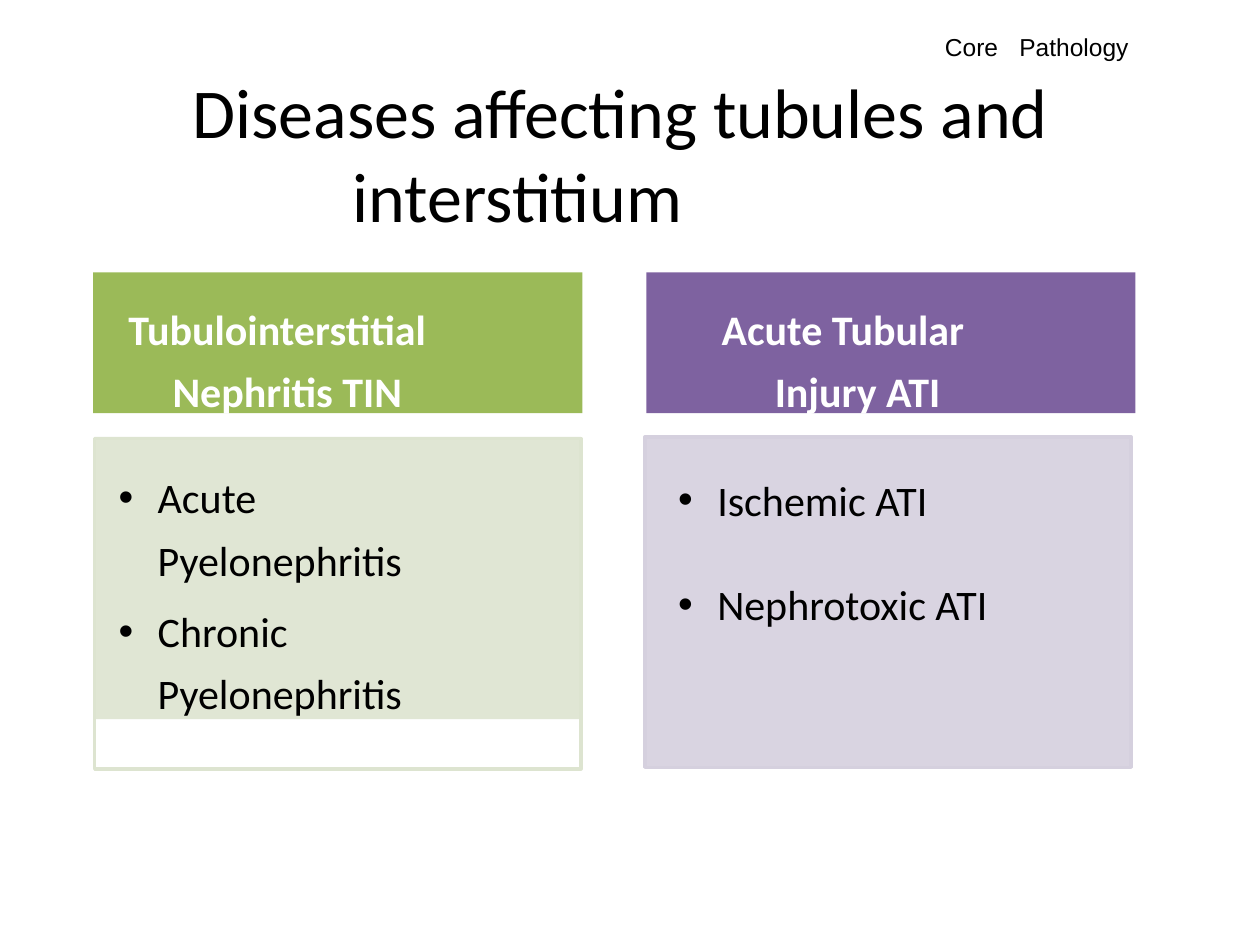
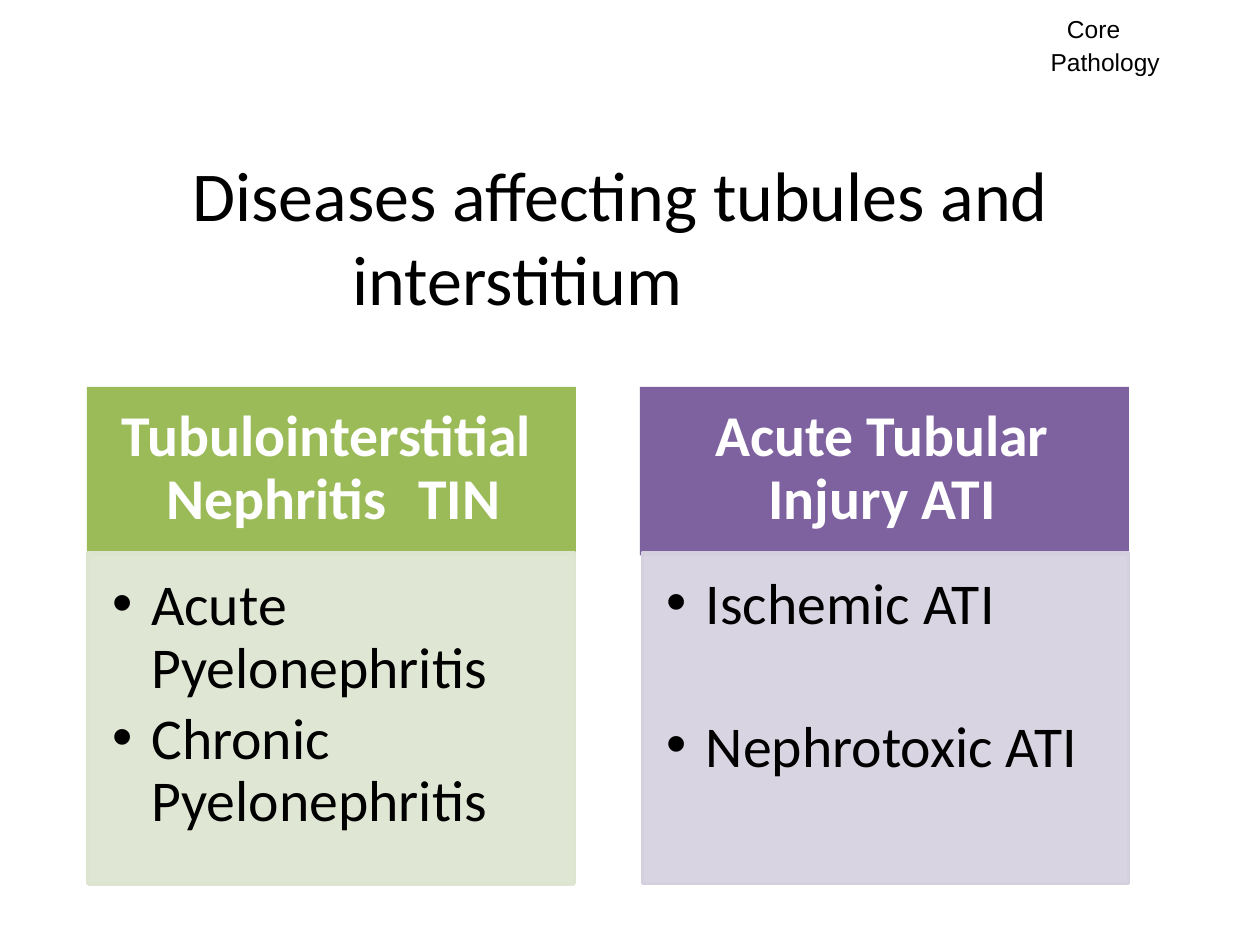
from dataclasses import dataclass

from lxml.etree import SubElement
from pptx import Presentation
from pptx.dml.color import RGBColor
from pptx.enum.shapes import MSO_SHAPE
from pptx.enum.text import MSO_ANCHOR, MSO_AUTO_SIZE, PP_ALIGN
from pptx.oxml.ns import qn
from pptx.shapes.autoshape import Shape
from pptx.slide import Slide
from pptx.util import Cm, Pt


@dataclass(frozen=True)
class Theme:
    black: str = "000000"
    white: str = "FFFFFF"
    green: str = "9BBA58"
    mint: str = "DDE4D0"
    purple: str = "7E62A0"
    lilac: str = "D5D0DE"
    head: str = "Calibri"
    tag: str = "Arial"
    title_size: int = 40
    tag_size: int = 14
    edge: float = 2.04
    lead: float = 35.7


@dataclass(frozen=True)
class Box:
    """Place and size in centimetres."""
    x: float
    y: float
    w: float
    h: float

    def cm(self) -> tuple[Cm, Cm, Cm, Cm]:
        return Cm(self.x), Cm(self.y), Cm(self.w), Cm(self.h)


@dataclass(frozen=True)
class Page:
    """What differs between the slides."""
    title_top: float
    size: int
    inset: float
    gap: str
    tags: tuple[Box, Box]
    heads: tuple[Box, Box]
    frames: tuple[Box, Box]
    fill: Box
    list_box: Box


THEME = Theme()
PITCH = 11.15
HEAD_W, BODY_W, BODY_H = 9.86, 9.8, 6.66
CORE_W, PATH_W, TAG_H = 1.14, 2.29, 0.66


def heads(x: float, y: float, h: float) -> tuple[Box, Box]:
    return Box(x, y, HEAD_W, h), Box(x + PITCH, y, HEAD_W, h)


PAGES = [
    Page(1.35, 24, 2.3, " ",
         (Box(19.05, 0.61, CORE_W, TAG_H), Box(20.55, 0.61, PATH_W, TAG_H)),
         heads(1.88, 5.49, 2.84),
         (Box(1.91, 8.84, BODY_W, BODY_H), Box(13, 8.81, BODY_W, BODY_H)),
         Box(1.91, 8.81, BODY_W, 5.69), Box(13.67, 9.53, 8.48, 3.18)),
    Page(3.02, 33, 0.65, "\t",
         (Box(21.51, 0.25, CORE_W, TAG_H), Box(21.18, 0.91, PATH_W, TAG_H)),
         heads(1.75, 7.8, 3.4),
         (Box(1.78, 11.15, BODY_W, BODY_H), Box(12.95, 11.15, BODY_W, BODY_H)),
         Box(1.78, 11.13, BODY_W, 6.73), Box(13.44, 11.4, 8.48, 4.34)),
]


def write(shape: Shape, text: str, *, size: float, font: str = THEME.head,
          color: str = THEME.black, bold: bool = False, left: float = 0,
          hang: float = 0, top: float = 0.03, right: float = 0,
          lead: float | None = None, before: float = 0,
          bullet: bool = False, tab: float | None = None) -> None:
    """Fill a shape, one paragraph for each line of text."""
    frame = shape.text_frame
    frame.word_wrap = True
    frame.auto_size = MSO_AUTO_SIZE.NONE
    frame.vertical_anchor = MSO_ANCHOR.TOP
    frame.margin_left = frame.margin_bottom = 0
    frame.margin_top, frame.margin_right = Cm(top), Cm(right)
    for num, line in enumerate(text.split("\n")):
        para = frame.add_paragraph() if num else frame.paragraphs[0]
        props = para._p.get_or_add_pPr()
        props.set("marL", str(Cm(left)))
        props.set("indent", str(Cm(hang)))
        if bullet:
            SubElement(props, qn("a:buFont"), typeface=THEME.tag)
            SubElement(props, qn("a:buChar"), char="•")
        if tab:
            tabs = SubElement(props, qn("a:tabLst"))
            SubElement(tabs, qn("a:tab"), pos=str(Cm(tab)), algn="l")
        para.alignment = PP_ALIGN.LEFT
        if lead:
            para.line_spacing = Pt(lead)
        para.space_before = Pt(before if num else 0)
        run = para.add_run()
        run.text = line
        run.font.name, run.font.size, run.font.bold = font, Pt(size), bold
        run.font.color.rgb = RGBColor.from_string(color)


def rect(slide: Slide, box: Box, fill: str | None = None,
         line: str | None = None, alpha: int = 100) -> Shape:
    shape = slide.shapes.add_shape(MSO_SHAPE.RECTANGLE, *box.cm())
    shape.shadow.inherit = False
    if fill:
        shape.fill.solid()
        shape.fill.fore_color.rgb = RGBColor.from_string(fill)
        if alpha < 100:
            tint = shape.fill._xPr.find(".//" + qn("a:srgbClr"))
            SubElement(tint, qn("a:alpha"), val=str(alpha * 1000))
    else:
        shape.fill.background()
    if line:
        shape.line.color.rgb = RGBColor.from_string(line)
        shape.line.width = Pt(THEME.edge)
    else:
        shape.line.fill.background()
    return shape


def draw(slide: Slide, page: Page) -> None:
    title = slide.shapes.title
    title.left, title.top, title.width, title.height = Box(
        3.86, page.title_top, 17.65, 3.45).cm()
    write(title, "Diseases affecting tubules and interstitium",
          size=THEME.title_size, left=3.25, hang=-3.23)

    names = (f"Tubulointerstitial Nephritis{page.gap}TIN",
             "Acute Tubular Injury ATI")
    fills = (THEME.green, THEME.purple)
    dents = ((1.6, -0.89), (2.59, -1.07))
    for box, name, fill, (left, hang) in zip(page.heads, names, fills, dents):
        write(rect(slide, box, fill), name, size=page.size, bold=True,
              color=THEME.white, left=left, hang=hang, top=0.38,
              right=page.inset, lead=THEME.lead, tab=6.6)

    rect(slide, page.frames[0], line=THEME.mint)
    write(rect(slide, page.fill, THEME.mint, alpha=90),
          "Acute Pyelonephritis\nChronic Pyelonephritis", size=page.size,
          left=1.27, hang=-0.79, top=0.46, right=page.inset,
          lead=THEME.lead, before=5, bullet=True)

    rect(slide, page.frames[1], THEME.lilac, THEME.lilac, alpha=90)
    write(slide.shapes.add_textbox(*page.list_box.cm()),
          "Ischemic ATI\nNephrotoxic ATI", size=page.size, left=0.79,
          hang=-0.79, before=round(page.size * 1.22 + 1.5, 1), bullet=True)

    for box, word in zip(page.tags, ("Core", "Pathology")):
        write(slide.shapes.add_textbox(*box.cm()), word,
              size=THEME.tag_size, font=THEME.tag)


def main() -> None:
    deck = Presentation()
    deck.slide_width, deck.slide_height = Cm(25.4), Cm(19.05)
    for page in PAGES:
        draw(deck.slides.add_slide(deck.slide_layouts[5]), page)
    deck.save("out.pptx")


if __name__ == "__main__":
    main()
